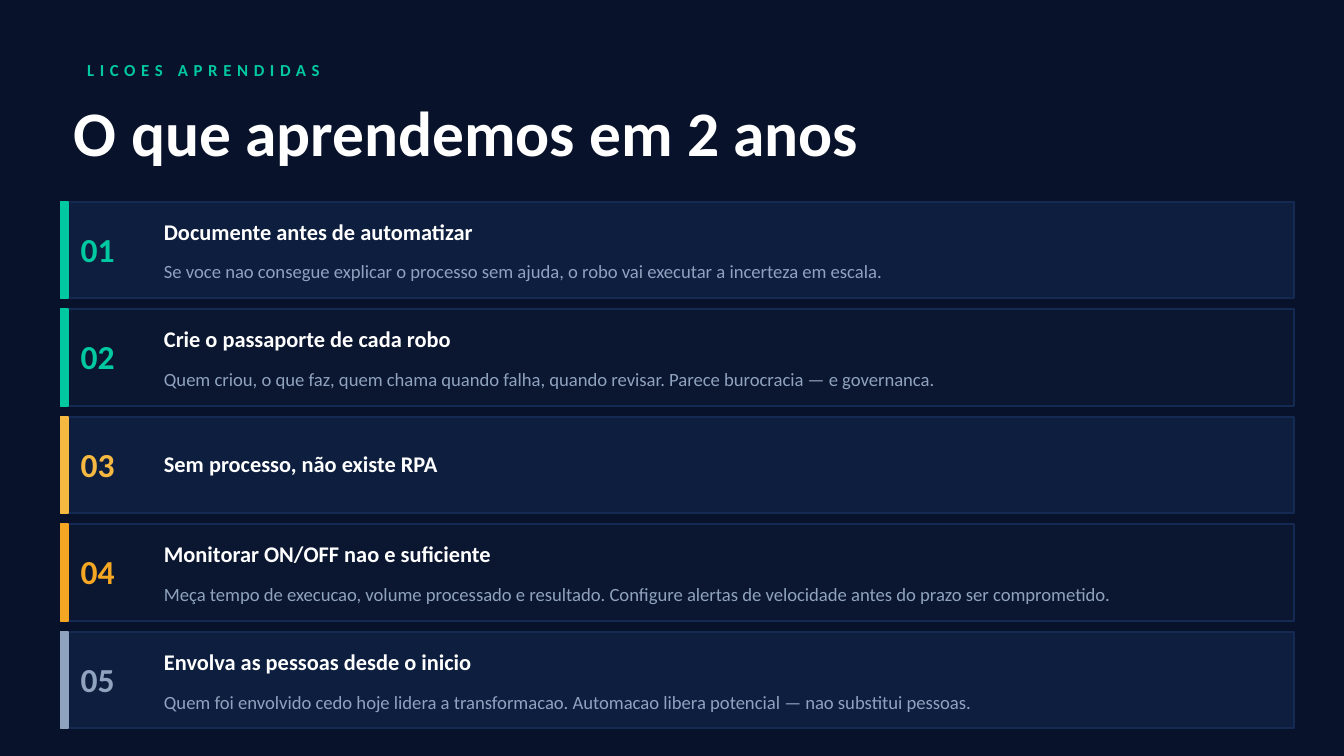
from pptx import Presentation
from pptx.dml.color import RGBColor
from pptx.enum.shapes import MSO_SHAPE as Shape
from pptx.enum.text import MSO_ANCHOR as Anchor, MSO_AUTO_SIZE as Fit, PP_ALIGN as Align
from pptx.util import Pt

WHITE, GREEN, GRAY = "FFFFFF", "00C8A0", "8FA3BF"
NIGHT, EDGE = "08122A", "152A52"
FILLS = ["0D1E3E", "0B1630"]
LEFT, TOP, WIDTH, HEIGHT, STEP = 32.4, 108, 660.96, 51.84, 57.6

LESSONS = [
    (GREEN, "Documente antes de automatizar",
     "Se voce nao consegue explicar o processo sem ajuda, o robo vai executar a incerteza em escala."),
    (GREEN, "Crie o passaporte de cada robo",
     "Quem criou, o que faz, quem chama quando falha, quando revisar. Parece burocracia — e governanca."),
    ("F5B942", "Sem processo, não existe RPA", ""),
    ("F5A623", "Monitorar ON/OFF nao e suficiente",
     "Meça tempo de execucao, volume processado e resultado. "
     "Configure alertas de velocidade antes do prazo ser comprometido."),
    (GRAY, "Envolva as pessoas desde o inicio",
     "Quem foi envolvido cedo hoje lidera a transformacao. "
     "Automacao libera potencial — nao substitui pessoas."),
]


def color(code):
    return RGBColor.from_string(code)


class Deck:
    font = "Calibri"

    def __init__(self, prs):
        self.slide = prs.slides.add_slide(prs.slide_layouts[5])
        fill = self.slide.background.fill
        fill.solid()
        fill.fore_color.rgb = color(NIGHT)

    def style(self, shape, words, size, tint, bold, inset=0):
        frame = shape.text_frame
        frame.text = words
        frame.word_wrap = True
        frame.auto_size = Fit.NONE
        frame.vertical_anchor = Anchor.MIDDLE
        frame.margin_left = frame.margin_right = Pt(inset)
        frame.margin_top = frame.margin_bottom = Pt(inset / 2)
        line = frame.paragraphs[0]
        line.alignment = Align.LEFT
        font = line.runs[0].font
        font.name, font.size, font.bold = self.font, Pt(size), bold
        font.color.rgb = color(tint)
        return line.runs[0]

    def title(self, words, x, y, w, h, size):
        shape = self.slide.shapes.title
        shape.left, shape.top, shape.width, shape.height = Pt(x), Pt(y), Pt(w), Pt(h)
        self.style(shape, words, size, WHITE, True)

    def text(self, words, x, y, w, h, size, tint, bold=True, inset=0):
        box = self.slide.shapes.add_textbox(Pt(x), Pt(y), Pt(w), Pt(h))
        return self.style(box, words, size, tint, bold, inset)

    def label(self, words, x, y, w, h, size, tint, gap):
        run = self.text(words, x, y, w, h, size, tint, inset=7.2)
        run.font._element.set("spc", str(gap * 100))

    def rect(self, x, y, w, h, fill, edge):
        shape = self.slide.shapes.add_shape(Shape.RECTANGLE, Pt(x), Pt(y), Pt(w), Pt(h))
        shape.shadow.inherit = False
        shape.fill.solid()
        shape.fill.fore_color.rgb = color(fill)
        shape.line.color.rgb = color(edge)
        shape.line.width = Pt(1)

    def lesson(self, index, tint, head, note):
        y = TOP + index * STEP
        self.rect(LEFT, y, WIDTH, HEIGHT, FILLS[index % 2], EDGE)
        self.rect(LEFT, y, 4.32, HEIGHT, tint, tint)
        self.text(f"{index + 1:02}", 43.2, y + 2.88, 39.6, 44.64, 18, tint)
        drop = 4.32 if note else 13.68
        self.text(head, 87.84, y + drop, 273.6, 23.04, 12, WHITE)
        if note:
            self.text(note, 87.84, y + 27.36, 594, 20.16, 10, GRAY, bold=False)


def main():
    prs = Presentation()
    prs.slide_width, prs.slide_height = Pt(720), Pt(405)
    deck = Deck(prs)
    deck.label("LICOES APRENDIDAS", 39.6, 27.36, 288, 20.16, 9, GREEN, 3)
    deck.title("O que aprendemos em 2 anos", 39.6, 46.8, 648, 46.8, 34)
    for index, lesson in enumerate(LESSONS):
        deck.lesson(index, *lesson)
    prs.save("out.pptx")


if __name__ == "__main__":
    main()
